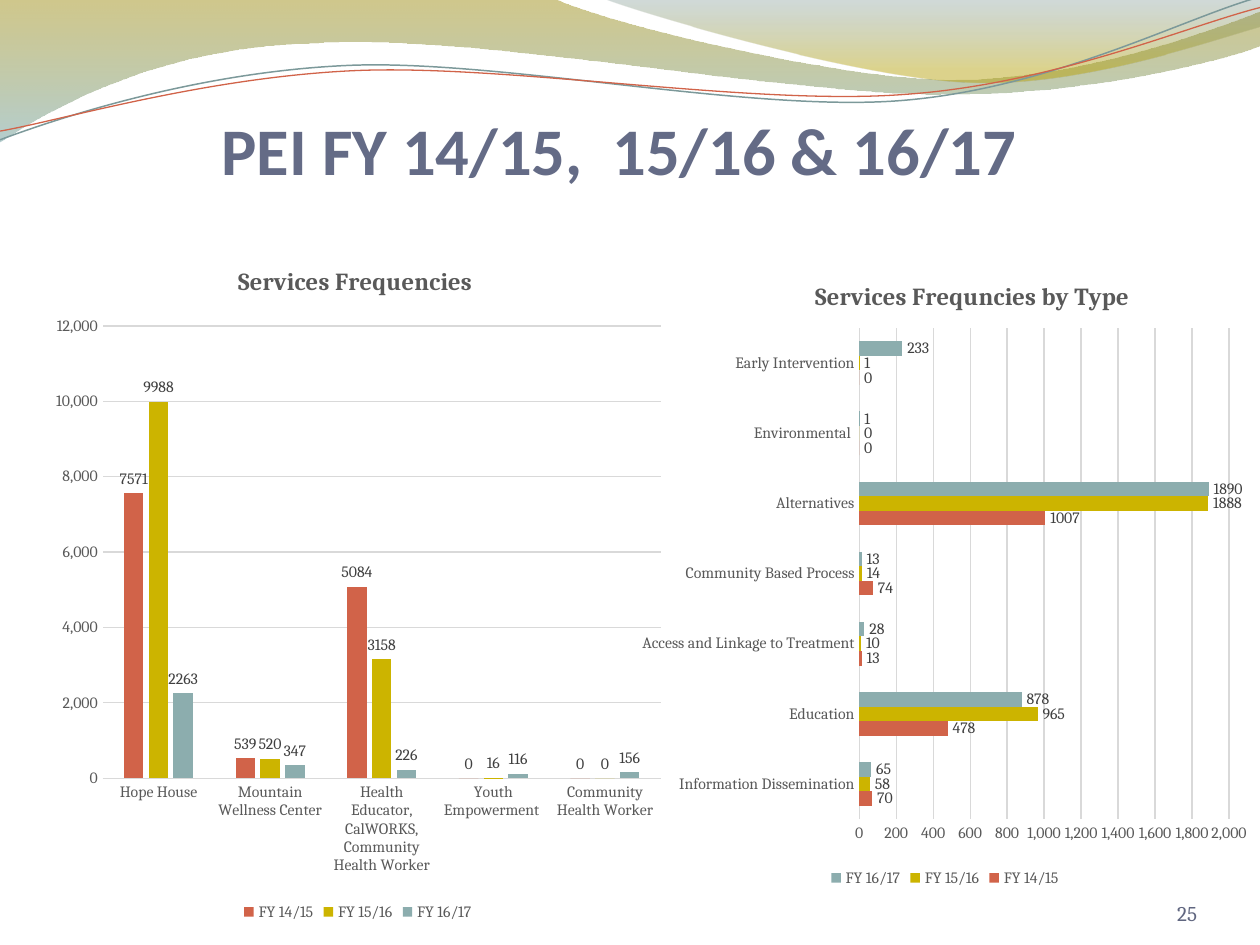
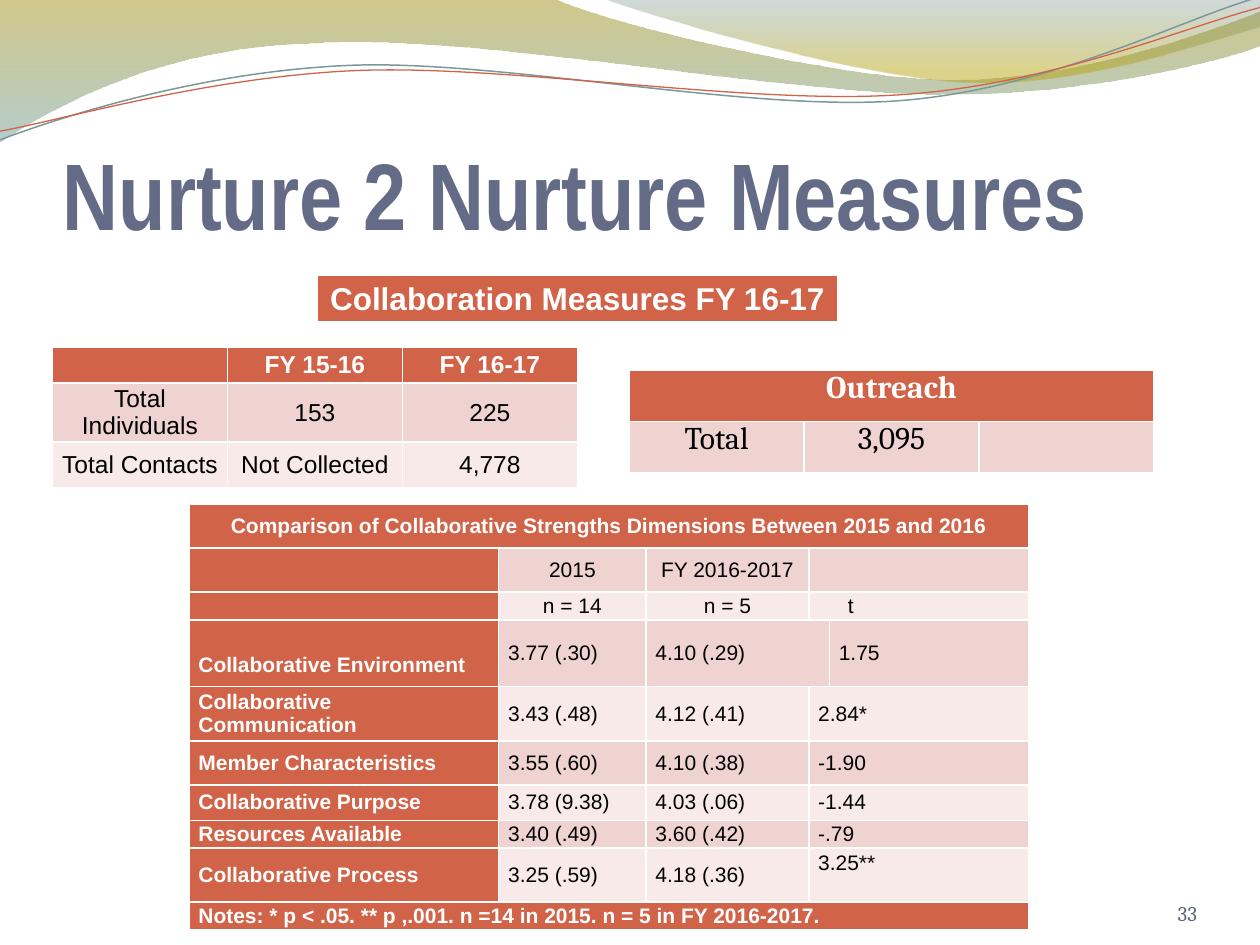
from dataclasses import dataclass

from pptx import Presentation
from pptx.chart.data import CategoryChartData
from pptx.dml.color import RGBColor
from pptx.enum.chart import XL_CHART_TYPE, XL_LABEL_POSITION, XL_LEGEND_POSITION, XL_TICK_MARK
from pptx.enum.shapes import MSO_SHAPE
from pptx.enum.text import MSO_ANCHOR, PP_ALIGN
from pptx.oxml import parse_xml
from pptx.oxml.ns import nsdecls, qn
from pptx.util import Pt

COLUMN, BAR = XL_CHART_TYPE.COLUMN_CLUSTERED, XL_CHART_TYPE.BAR_CLUSTERED
LABEL_OUTSIDE = XL_LABEL_POSITION.OUTSIDE_END
LEGEND_BOTTOM = XL_LEGEND_POSITION.BOTTOM
NO_TICKS = XL_TICK_MARK.NONE
RECTANGLE = MSO_SHAPE.RECTANGLE
TOP, MIDDLE, BOTTOM = MSO_ANCHOR.TOP, MSO_ANCHOR.MIDDLE, MSO_ANCHOR.BOTTOM
LEFT, CENTER, RIGHT = PP_ALIGN.LEFT, PP_ALIGN.CENTER, PP_ALIGN.RIGHT


@dataclass(frozen=True)
class Theme:
    title: str = "646B86"
    page_number: str = "606680"
    accent: str = "D16349"
    band_dark: str = "EED3D0"
    band_light: str = "F7EAE9"
    white: str = "FFFFFF"
    black: str = "000000"
    grid: str = "D9D9D9"
    axis_text: str = "595959"
    label_text: str = "404040"
    wave_line: str = "7C999A"
    wide_wave: tuple = ((0, "978500", 45), (100, "77A5A6", 55))
    right_wave: tuple = ((0, "648484", 30), (80, "B49F00", 45))
    series: tuple = ("D16349", "CCB400", "8CADAE")
    serif: str = "Cambria"
    sans: str = "Arial"
    chart_size: int = 9
    chart_title_size: int = 14
    small: int = 12
    medium: int = 14
    large: int = 18


# Outlines in points: pairs are corners, sixes are Bézier segments.
WIDE_WAVE = [(0, 0), (316.8, -0.7), (342.7, 12.2, 478.1, 45.4, 545.8, 45.4),
             (614.2, 45.4, 689.8, 18.7, 720, 6.5), (720.7, 25.9),
             (707.8, 31.7, 626.4, 54.7, 537.1, 54), (446.4, 54, 275, 20.2, 185, 24.5),
             (92.9, 25.9, 33.1, 59.8, -0.7, 81.4)]
RIGHT_WAVE = [(344.9, -0.7), (366.5, 7.9, 491, 44.6, 553.7, 46.8),
              (616.3, 49.7, 691.9, 23, 720, 15.1), (720, 0)]
TEAL_CURVE = [(0, 79.9), (34.6, 67, 113.8, 41, 199.4, 37.4),
              (284.4, 33.8, 427, 64.1, 513.4, 57.6), (599.8, 51.1, 675.4, 10.8, 718.6, -1.4)]
RED_CURVE = [(0, 74.9), (33.8, 69.1, 118.1, 43.9, 203.8, 40.3),
             (290.2, 36.7, 429.8, 60.5, 516.2, 54), (601.9, 48.2, 677.5, 15.1, 720, 4.3)]


def rgb(color):
    return RGBColor.from_string(color)


def set_layout(element, index, **values):
    """Place a chart part by fractions of the chart area."""
    for old in element.findall(qn("c:layout")):
        element.remove(old)
    target = '<c:layoutTarget val="inner"/>' if "w" in values else ""
    modes = "".join(f'<c:{key}Mode val="edge"/>' for key in "xy")
    numbers = "".join(f'<c:{key} val="{value}"/>' for key, value in values.items())
    element.insert(index, parse_xml(
        f'<c:layout {nsdecls("c")}><c:manualLayout>{target}{modes}{numbers}'
        "</c:manualLayout></c:layout>"))


class Deck:
    def __init__(self, theme):
        self.theme = theme
        self.presentation = Presentation()
        self.presentation.slide_width = Pt(720)
        self.presentation.slide_height = Pt(540)
        self.slide = None

    def start_slide(self, number):
        theme = self.theme
        self.slide = self.presentation.slides.add_slide(self.presentation.slide_layouts[6])
        self.wave(WIDE_WAVE, theme.wide_wave)
        self.wave(RIGHT_WAVE, theme.right_wave)
        self.curve(TEAL_CURVE, theme.wave_line, 0.85)
        self.curve(RED_CURVE, theme.accent, 0.75)
        self.text(str(number), (624, 500.4, 60, 28.8), theme.serif, theme.small,
                  theme.page_number, align=RIGHT)

    def style(self, paragraph, font, size, color, bold=False, align=None):
        paragraph.alignment = align
        self.style_font(paragraph.font, size, color, bold, font)

    def style_font(self, font, size, color, bold=False, name=None):
        font.name = name or self.theme.serif
        font.size = Pt(size)
        font.bold = bold
        font.color.rgb = rgb(color)

    def outline(self, outline, close):
        """Build a freeform, then join each run of three control points into one curve."""
        points = [(Pt(segment[i]), Pt(segment[i + 1]))
                  for segment in outline for i in range(0, len(segment), 2)]
        builder = self.slide.shapes.build_freeform(*points[0])
        builder.add_line_segments(points[1:], close=close)
        shape = builder.convert_to_shape()
        shape.shadow.inherit = False
        lines = iter(list(shape.element.iter(qn("a:lnTo"))))
        for segment in outline[1:]:
            steps = [next(lines) for _ in range(len(segment) // 2)]
            if len(steps) == 3:
                bezier = parse_xml(f'<a:cubicBezTo {nsdecls("a")}/>')
                steps[0].addprevious(bezier)
                for step in steps:
                    bezier.append(step[0])
                    step.getparent().remove(step)
        return shape

    def wave(self, outline, stops):
        """Draw a closed band with a translucent top-to-bottom gradient."""
        shape = self.outline(outline, True)
        shape.line.fill.background()
        stop_xml = "".join(
            f'<a:gs pos="{position * 1000}"><a:srgbClr val="{color}">'
            f'<a:alpha val="{opacity * 1000}"/></a:srgbClr></a:gs>'
            for position, color, opacity in stops)
        shape.element.spPr.find(qn("a:custGeom")).addnext(parse_xml(
            f'<a:gradFill {nsdecls("a")} rotWithShape="1"><a:gsLst>{stop_xml}</a:gsLst>'
            '<a:lin ang="5400000" scaled="0"/></a:gradFill>'))

    def curve(self, outline, color, width):
        shape = self.outline(outline, False)
        shape.fill.background()
        shape.line.color.rgb = rgb(color)
        shape.line.width = Pt(width)

    def text(self, text, box, font, size, color, bold=False, align=LEFT, top_inset=0):
        frame = self.slide.shapes.add_textbox(*map(Pt, box)).text_frame
        frame.word_wrap = True
        frame.vertical_anchor = BOTTOM
        frame.margin_left = frame.margin_right = frame.margin_bottom = 0
        frame.margin_top = Pt(top_inset)
        frame.text = text
        self.style(frame.paragraphs[0], font, size, color, bold, align)

    def title(self, text, box, font, size, align=LEFT):
        self.text(text, box, font, size, self.theme.title, True, align, 3.6)

    def banner(self, text, box):
        theme = self.theme
        shape = self.slide.shapes.add_shape(RECTANGLE, *map(Pt, box))
        shape.fill.solid()
        shape.fill.fore_color.rgb = rgb(theme.accent)
        shape.line.color.rgb = rgb(theme.white)
        shape.line.width = Pt(3)
        shape.shadow.inherit = False
        shape.text_frame.word_wrap = False
        shape.text_frame.text = text
        self.style(shape.text_frame.paragraphs[0], theme.sans, theme.large, theme.white,
                   True, CENTER)

    def chart(self, kind, box, title, title_at, plot, categories, values, gap, overlap, top, step):
        theme = self.theme
        data = CategoryChartData()
        data.categories = categories
        for name, numbers in values.items():
            data.add_series(name, numbers)
        chart = self.slide.shapes.add_chart(kind, *map(Pt, box), data).chart
        self.style_font(chart.font, 10, theme.black)

        chart.has_title = True
        chart.chart_title.text_frame.text = title
        self.style(chart.chart_title.text_frame.paragraphs[0], theme.serif,
                   theme.chart_title_size, theme.axis_text, True)
        set_layout(chart.chart_title._element, 1, **title_at)
        set_layout(chart._chartSpace.chart.plotArea, 0, **plot)

        chart.has_legend = True
        chart.legend.position = LEGEND_BOTTOM
        chart.legend.include_in_layout = False
        self.style_font(chart.legend.font, theme.chart_size, theme.axis_text)

        value_axis, category_axis = chart.value_axis, chart.category_axis
        for axis in (value_axis, category_axis):
            axis.major_tick_mark = axis.minor_tick_mark = NO_TICKS
            self.style_font(axis.tick_labels.font, theme.chart_size, theme.axis_text)
        for line in (category_axis.format.line, value_axis.major_gridlines.format.line):
            line.color.rgb = rgb(theme.grid)
            line.width = Pt(0.75)
        value_axis.format.line.fill.background()
        value_axis.minimum_scale, value_axis.maximum_scale = 0, top
        value_axis.major_unit = step
        value_axis.tick_labels.number_format = "#,##0"
        value_axis.tick_labels.number_format_is_linked = False

        bars = chart.plots[0]
        bars.gap_width, bars.overlap = gap, overlap
        bars.vary_by_categories = False
        for series, color in zip(bars.series, theme.series):
            series.format.fill.solid()
            series.format.fill.fore_color.rgb = rgb(color)
            labels = series.data_labels
            labels.show_value = True
            labels.position = LABEL_OUTSIDE
            self.style_font(labels.font, theme.chart_size, theme.label_text)

    def table(self, corner, widths, heights, rows, font, size, inset, anchor=MIDDLE,
              centered_rows=None, accent_column=False, accent_rows=(0,)):
        """Add a banded table; None in a row continues the cell to its left."""
        theme = self.theme
        frame = self.slide.shapes.add_table(len(rows), len(widths), *map(Pt, corner),
                                            Pt(sum(widths)), Pt(sum(heights)))
        table = frame.table
        table.first_col = accent_column
        for column, width in zip(table.columns, widths):
            column.width = Pt(width)
        for row, height in zip(table.rows, heights):
            row.height = Pt(height)
        for r, row in enumerate(rows):
            band = theme.band_dark if r % 2 else theme.band_light
            centered = centered_rows is None or r < centered_rows
            for c, text in enumerate(row):
                cell = table.cell(r, c)
                accent = r in accent_rows or (accent_column and c == 0)
                cell.fill.solid()
                cell.fill.fore_color.rgb = rgb(theme.accent if accent else band)
                cell.vertical_anchor = anchor
                cell.margin_left = cell.margin_right = Pt(inset)
                cell.margin_top = cell.margin_bottom = 0
                cell.text = text or ""
                self.style(cell.text_frame.paragraphs[0], font, size,
                           theme.white if accent else theme.black, accent,
                           CENTER if centered else LEFT)
            starts = [c for c, text in enumerate(row) if text is not None]
            for start, end in zip(starts, starts[1:] + [len(row)]):
                if end - start > 1:
                    table.cell(r, start).merge(table.cell(r, end - 1))
        return table


def services_slide(deck):
    deck.start_slide(25)
    deck.title("PEI FY 14/15,  15/16 & 16/17", (24, 60, 660, 48), "Calibri", 38, CENTER)
    deck.chart(
        COLUMN, (24.5, 138.2, 360, 391), "Services Frequencies", dict(x=0.303, y=0.028),
        dict(x=0.095, y=0.123, w=0.886, h=0.661),
        ["Hope House", "Mountain Wellness Center",
         "Health Educator, CalWORKS, Community Health Worker",
         "Youth Empowerment ", "Community Health Worker"],
        {"FY 14/15": (7571, 539, 5084, 0, 0), "FY 15/16": (9988, 520, 3158, 16, 0),
         "FY 16/17": (2263, 347, 226, 116, 156)}, 219, -27, 12000, 2000)
    deck.chart(
        BAR, (360, 144, 360, 365.8), "Services Frequncies by Type", dict(x=0.287, y=0.038),
        dict(x=0.364, y=0.119, w=0.587, h=0.767),
        ["Information Dissemination", "Education", "Access and Linkage to Treatment",
         "Community Based Process", "Alternatives", "Environmental ", "Early Intervention"],
        {"FY 14/15": (70, 478, 13, 74, 1007, 0, 0), "FY 15/16": (58, 965, 10, 14, 1888, 0, 1),
         "FY 16/17": (65, 878, 28, 13, 1890, 1, 233)}, 182, 0, 2000, 200)


def measures_slide(deck):
    theme = deck.theme
    deck.start_slide(33)
    deck.title("Nurture 2 Nurture Measures", (36, 72, 648, 70.6), "Arial Narrow", 54)
    deck.table((359.5, 211.7), [100] * 3, [29.2] * 2,
               [["Outreach", None, None], ["Total", "3,095", ""]],
               theme.serif, theme.large, 3.6, TOP)
    deck.table((30, 198.7), [100] * 3, [20.2, 30.6, 26],
               [["", "FY 15-16", "FY 16-17"], ["Total Individuals", "153", "225"],
                ["Total Contacts", "Not Collected", "4,778"]],
               theme.sans, theme.medium, 3.6)
    deck.banner("Collaboration Measures FY 16-17", (180, 156, 300, 29))
    comparison = deck.table(
        (108, 288), [177, 84.2, 93, 11.8, 114],
        [25.2, 25.2, 15.8, 38.2, 31, 25.2, 20.2, 15.8, 31, 15.8],
        [["Comparison of Collaborative Strengths Dimensions Between 2015 and 2016"] + [None] * 4,
         ["", "2015", "FY 2016-2017", "", None],
         ["", "n = 14", "n = 5", "t", None],
         ["Collaborative Environment", "3.77 (.30)", "4.10 (.29)", None, "1.75"],
         ["Collaborative Communication", "3.43 (.48)", "4.12 (.41)", "2.84*", None],
         ["Member Characteristics", "3.55 (.60)", "4.10 (.38)", "-1.90", None],
         ["Collaborative Purpose", "3.78 (9.38)", "4.03 (.06)", "-1.44", None],
         ["Resources Available", "3.40 (.49)", "3.60 (.42)", "-.79", None],
         ["Collaborative Process", "3.25 (.59)", "4.18 (.36)", "3.25**", None],
         ["Notes: * p < .05. ** p ,.001. n =14 in 2015. n = 5 in FY 2016-2017."] + [None] * 4],
        theme.sans, theme.small, 5.4, centered_rows=3, accent_column=True, accent_rows=(0, 9))
    statistic = comparison.cell(2, 3)
    statistic.margin_left = Pt(22.3)
    statistic.text_frame.paragraphs[0].alignment = LEFT
    comparison.cell(3, 0).margin_top = Pt(13.8)
    comparison.cell(8, 3).margin_bottom = Pt(13.8)


def main():
    deck = Deck(Theme())
    services_slide(deck)
    measures_slide(deck)
    deck.presentation.save("out.pptx")


if __name__ == "__main__":
    main()
